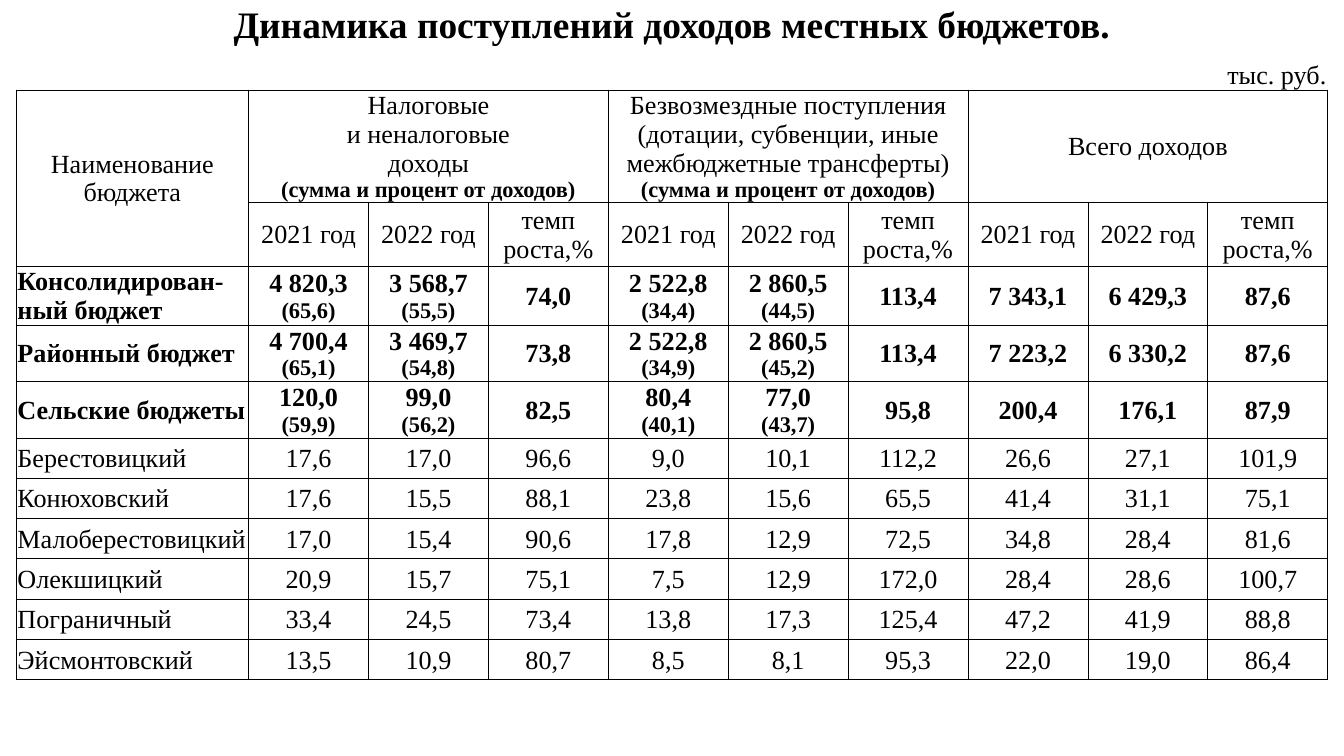
"""Build a slide with a table of local budget revenue dynamics."""
from dataclasses import dataclass

import pptx
import pptx.dml.color
import pptx.enum.text
import pptx.oxml
import pptx.oxml.ns
import pptx.util
from pptx.util import Inches

ALIGN = pptx.enum.text.PP_ALIGN
ANCHOR = pptx.enum.text.MSO_ANCHOR


@dataclass(frozen=True)
class Theme:
    font: str = "Times New Roman"
    ink: str = "000000"
    title: int = 20
    body: int = 14
    note: int = 12
    border: float = 0.5


@dataclass(frozen=True)
class Line:
    text: str
    size: int = Theme.body
    bold: bool = False


@dataclass(frozen=True)
class Group:
    col: int
    lines: tuple[str, ...]
    note: str = ""


@dataclass(frozen=True)
class Budget:
    name: str
    values: tuple[str, ...]
    shares: tuple[str, ...] = ()

    @property
    def bold(self) -> bool:
        return bool(self.shares)


THEME = Theme()
LEFT, TOP, WIDTH = 0.12, 0.03, 9.76
NAME_WIDTH = 1.73
HEIGHTS = [0.32, 0.32, 0.83, 0.47, 0.44, 0.42, 0.42] + [0.3] * 6
COLS = 10
UNIT_ROW, GROUP_ROW, YEAR_ROW, DATA_ROW = 1, 2, 3, 4
SHARE_COLS = (1, 2, 4, 5)
NOTE = "(сумма и процент от доходов)"
GROUPS = [
    Group(1, ("Налоговые", "и неналоговые", "доходы"), NOTE),
    Group(4, ("Безвозмездные поступления (дотации, субвенции, иные межбюджетные трансферты)",), NOTE),
    Group(7, ("Всего доходов",)),
]
SUBHEADS = [("2021 год",), ("2022 год",), ("темп", "роста,%")]
BUDGETS = [
    Budget("Консолидирован-ный бюджет",
           ("4 820,3", "3 568,7", "74,0", "2 522,8", "2 860,5", "113,4", "7 343,1", "6 429,3", "87,6"),
           ("65,6", "55,5", "34,4", "44,5")),
    Budget("Районный бюджет",
           ("4 700,4", "3 469,7", "73,8", "2 522,8", "2 860,5", "113,4", "7 223,2", "6 330,2", "87,6"),
           ("65,1", "54,8", "34,9", "45,2")),
    Budget("Сельские бюджеты",
           ("120,0", "99,0", "82,5", "80,4", "77,0", "95,8", "200,4", "176,1", "87,9"),
           ("59,9", "56,2", "40,1", "43,7")),
    Budget("Берестовицкий", ("17,6", "17,0", "96,6", "9,0", "10,1", "112,2", "26,6", "27,1", "101,9")),
    Budget("Конюховский", ("17,6", "15,5", "88,1", "23,8", "15,6", "65,5", "41,4", "31,1", "75,1")),
    Budget("Малоберестовицкий", ("17,0", "15,4", "90,6", "17,8", "12,9", "72,5", "34,8", "28,4", "81,6")),
    Budget("Олекшицкий", ("20,9", "15,7", "75,1", "7,5", "12,9", "172,0", "28,4", "28,6", "100,7")),
    Budget("Пограничный", ("33,4", "24,5", "73,4", "13,8", "17,3", "125,4", "47,2", "41,9", "88,8")),
    Budget("Эйсмонтовский", ("13,5", "10,9", "80,7", "8,5", "8,1", "95,3", "22,0", "19,0", "86,4")),
]


def set_borders(cell, sides: str) -> None:
    """Draw the named sides of a cell and hide the others."""
    tcPr = cell._tc.get_or_add_tcPr()
    for side in "LRTB":
        fill = f'<a:solidFill><a:srgbClr val="{THEME.ink}"/></a:solidFill>' if side in sides else "<a:noFill/>"
        tcPr.append(pptx.oxml.parse_xml(
            f'<a:ln{side} {pptx.oxml.ns.nsdecls("a")} w="{pptx.util.Pt(THEME.border)}">{fill}</a:ln{side}>'))


def write(cell, lines: list[Line], align=ALIGN.CENTER, anchor=ANCHOR.MIDDLE) -> None:
    """Fill a cell with one paragraph per line."""
    cell.vertical_anchor = anchor
    tf = cell.text_frame
    for i, line in enumerate(lines):
        p = tf.paragraphs[0] if i == 0 else tf.add_paragraph()
        p.text = line.text
        p.alignment = align
        p.font.name = THEME.font
        p.font.size = pptx.util.Pt(line.size)
        p.font.bold = line.bold
        p.font.color.rgb = pptx.dml.color.RGBColor.from_string(THEME.ink)


def add_grid(s):
    """Add the empty bordered table."""
    tbl = s.shapes.add_table(len(HEIGHTS), COLS, Inches(LEFT), Inches(TOP),
                             Inches(WIDTH), Inches(sum(HEIGHTS))).table
    tbl.first_row = tbl.horz_banding = False
    for i, col in enumerate(tbl.columns):
        col.width = Inches((WIDTH - NAME_WIDTH) / (COLS - 1) if i else NAME_WIDTH)
    for r, height in enumerate(HEIGHTS):
        tbl.rows[r].height = Inches(height)
        for c in range(COLS):
            cell = tbl.cell(r, c)
            set_borders(cell, "LRTB" if r >= GROUP_ROW else "B" if r == UNIT_ROW else "")
            cell.fill.background()
            cell.margin_left = cell.margin_right = cell.margin_top = Inches(0.01)
            cell.margin_bottom = 0
            write(cell, [Line("")])
    return tbl


def write_heads(tbl) -> None:
    """Write the title, the unit and the column heads."""
    last = COLS - 1
    tbl.cell(0, 0).merge(tbl.cell(0, last))
    write(tbl.cell(0, 0), [Line("Динамика поступлений доходов местных бюджетов.", THEME.title, True)],
          anchor=ANCHOR.BOTTOM)
    for col in (1, 3, 5):
        tbl.cell(UNIT_ROW, col).merge(tbl.cell(UNIT_ROW, col + 1))
    write(tbl.cell(UNIT_ROW, last), [Line("тыс. руб.")], ALIGN.RIGHT, ANCHOR.BOTTOM)
    tbl.cell(GROUP_ROW, 0).merge(tbl.cell(YEAR_ROW, 0))
    write(tbl.cell(GROUP_ROW, 0), [Line("Наименование бюджета")])
    for group in GROUPS:
        head = tbl.cell(GROUP_ROW, group.col)
        head.merge(tbl.cell(GROUP_ROW, group.col + len(SUBHEADS) - 1))
        note = [Line(group.note, THEME.note, True)] if group.note else []
        write(head, [Line(t) for t in group.lines] + note)
        for i, texts in enumerate(SUBHEADS):
            write(tbl.cell(YEAR_ROW, group.col + i), [Line(t) for t in texts])


def write_budget(tbl, row: int, budget: Budget) -> None:
    """Write one budget with its values and shares."""
    write(tbl.cell(row, 0), [Line(budget.name, bold=budget.bold)], ALIGN.LEFT)
    shares = dict(zip(SHARE_COLS, budget.shares))
    for col, value in enumerate(budget.values, 1):
        lines = [Line(value, bold=budget.bold)]
        if col in shares:
            lines.append(Line(f"({shares[col]})", THEME.note, True))
        write(tbl.cell(row, col), lines)


def main() -> None:
    """Build and save the presentation."""
    prs = pptx.Presentation()
    prs.slide_width = Inches(10)
    prs.slide_height = prs.slide_width * 9 // 16
    s = prs.slides.add_slide(prs.slide_layouts[6])
    tbl = add_grid(s)
    write_heads(tbl)
    for row, budget in enumerate(BUDGETS, DATA_ROW):
        write_budget(tbl, row, budget)
    prs.save("out.pptx")


if __name__ == "__main__":
    main()
